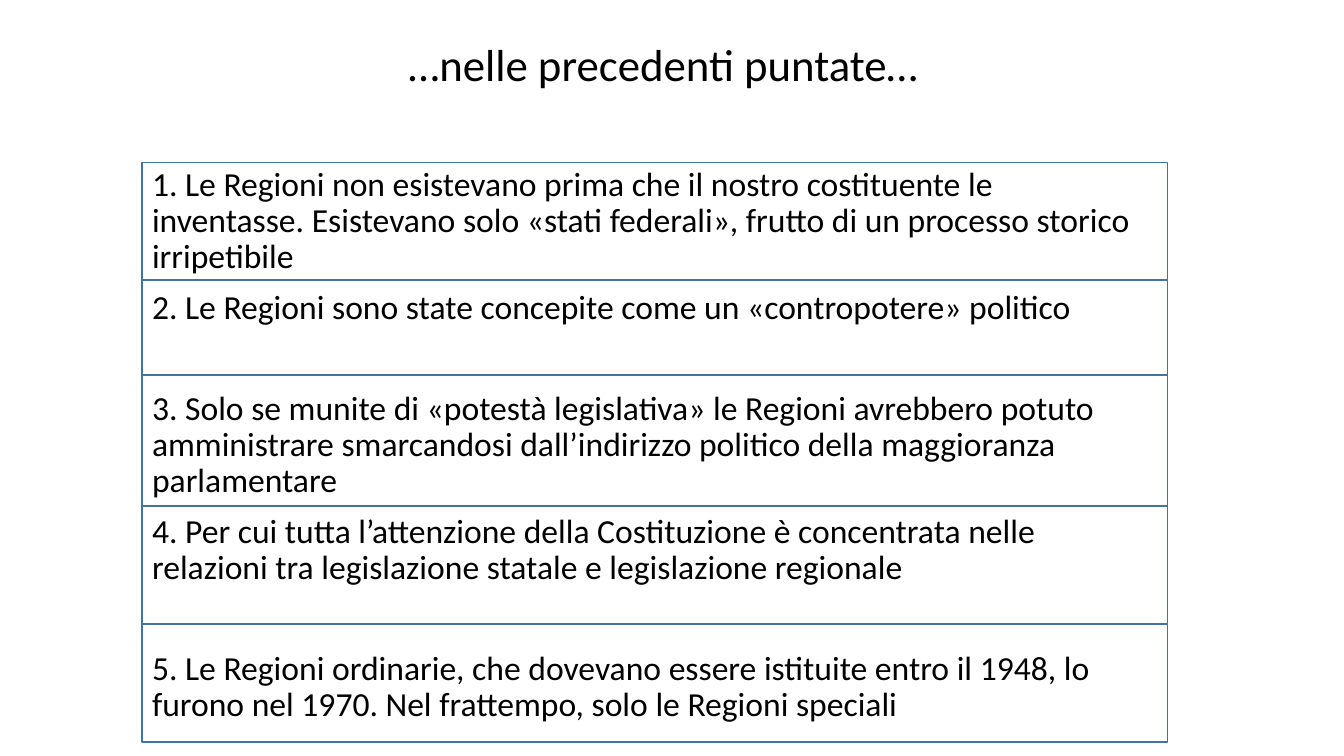
from dataclasses import dataclass

from pptx import Presentation
from pptx.dml.color import RGBColor
from pptx.enum.shapes import MSO_SHAPE as Shape
from pptx.enum.text import MSO_ANCHOR as Anchor, PP_ALIGN as Align
from pptx.util import Inches, Pt


@dataclass(frozen=True)
class Theme:
    font: str = "Calibri"
    ink: RGBColor = RGBColor(0x00, 0x00, 0x00)
    frame: RGBColor = RGBColor(0x43, 0x73, 0x9E)
    title_size: int = 32
    body_size: int = 24
    line_spacing: float = 0.9
    frame_width: int = 1


def write(para, text, theme, *, size, align=Align.LEFT, before=0):
    """Put formatted text into a paragraph."""
    para.alignment = align
    para.line_spacing = theme.line_spacing
    para.space_before = Pt(before)
    span = para.add_run()
    span.text = text
    span.font.name = theme.font
    span.font.size = Pt(size)
    span.font.color.rgb = theme.ink


class SlideBuilder:
    def __init__(self, slide, theme):
        self.slide = slide
        self.theme = theme

    def text_box(self, left, top, width, height, items, anchor=Anchor.TOP, **style):
        """Add a text box; items are (text, space before) pairs."""
        box = self.slide.shapes.add_textbox(
            Inches(left), Inches(top), Inches(width), Inches(height))
        frame = box.text_frame
        frame.word_wrap = True
        frame.vertical_anchor = anchor
        for index, (text, before) in enumerate(items):
            para = frame.add_paragraph() if index else frame.paragraphs[0]
            write(para, text, self.theme, before=before, **style)

    def outline(self, left, top, width, height):
        """Add an unfilled rectangle."""
        box = self.slide.shapes.add_shape(
            Shape.RECTANGLE, Inches(left), Inches(top), Inches(width), Inches(height))
        box.shadow.inherit = False
        box.fill.background()
        box.line.color.rgb = self.theme.frame
        box.line.width = Pt(self.theme.frame_width)


# Space before each point, and the wider gap that opens a new group
GAP = 10
WIDE_GAP = 46.4

POINTS = [
    ("1. Le Regioni non esistevano prima che il nostro costituente le inventasse. "
     "Esistevano solo «stati federali», frutto di un processo storico irripetibile", GAP),
    ("2. Le Regioni sono state concepite come un «contropotere» politico", GAP),
    ("3. Solo se munite di «potestà legislativa» le Regioni avrebbero potuto "
     "amministrare smarcandosi dall’indirizzo politico della maggioranza parlamentare",
     WIDE_GAP),
    ("4. Per cui tutta l’attenzione della Costituzione è concentrata nelle relazioni "
     "tra legislazione statale e legislazione regionale", GAP),
    ("5. Le Regioni ordinarie, che dovevano essere istituite entro il 1948, lo furono "
     "nel 1970. Nel frattempo, solo le Regioni speciali", WIDE_GAP),
]
FRAME_HEIGHTS = [1.17, 0.94, 1.3, 1.17, 1.17]
LEFT, TOP = 1.41, 1.61


def main():
    deck = Presentation()
    deck.slide_width, deck.slide_height = Inches(13.33), Inches(7.5)
    theme = Theme()
    page = SlideBuilder(deck.slides.add_slide(deck.slide_layouts[6]), theme)

    # Title
    page.text_box(1.58, 0.41, 10, 0.54, [("…nelle precedenti puntate…", 0)],
                  anchor=Anchor.BOTTOM, size=theme.title_size, align=Align.CENTER)

    # Five points
    page.text_box(LEFT, TOP, 10, 5.74, POINTS, size=theme.body_size)

    # Stacked frames, one around each point
    top = TOP
    for height in FRAME_HEIGHTS:
        page.outline(LEFT, top, 10.17, height)
        top += height

    deck.save("out.pptx")


if __name__ == "__main__":
    main()
